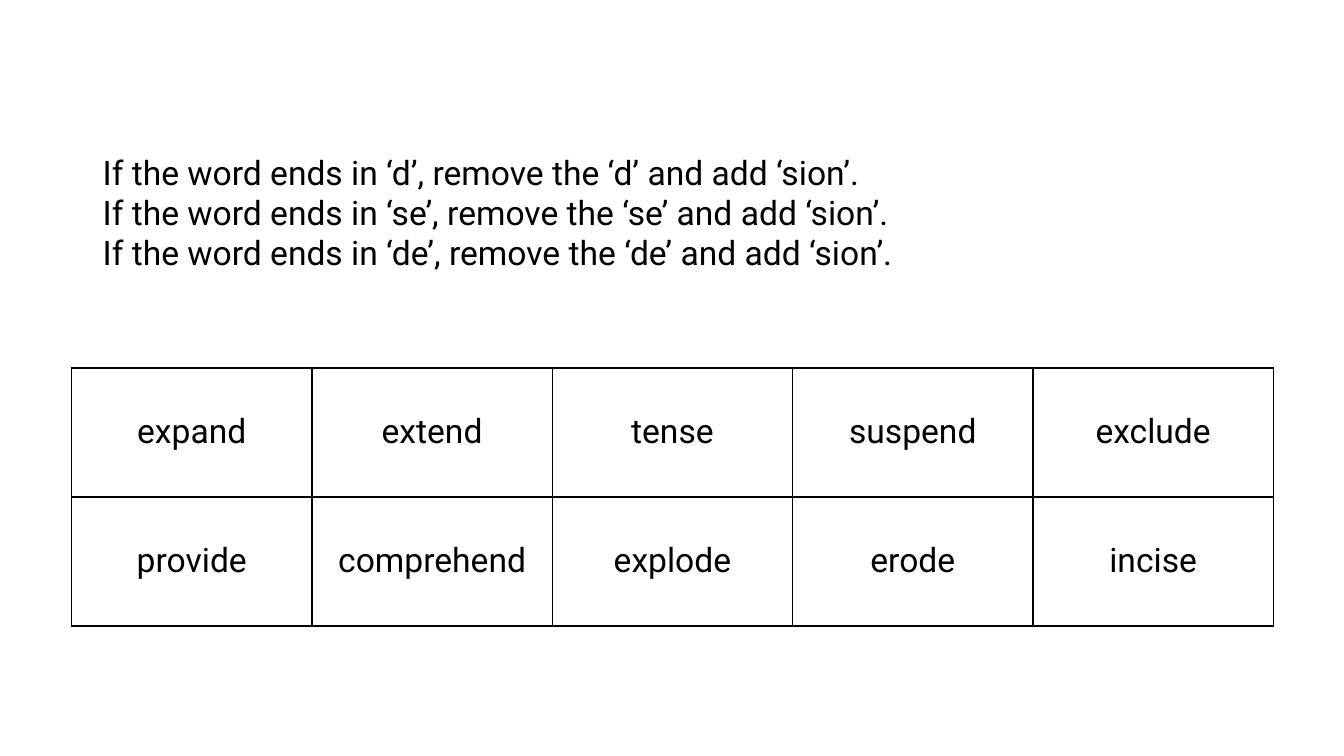
from pptx import Presentation
from pptx import util as u
from pptx.dml.color import RGBColor
from pptx.enum import text
from pptx.oxml import parse_xml
from pptx.oxml.ns import nsdecls

# Content
RULES = [("d", "sion"), ("se", "sion"), ("de", "sion")]
WORDS = [
    ["expand", "extend", "tense", "suspend", "exclude"],
    ["provide", "comprehend", "explode", "erode", "incise"],
]
FONT, SIZE = "Roboto", 24
INK, PAPER = "000000", "FFFFFF"
TABLE_LEFT, TABLE_TOP, TABLE_WIDTH, ROW_HEIGHT = 0.71, 3.65, 11.92, 1.28


def colour(code):
    return RGBColor.from_string(code)


def add_span(para, words):
    span = para.add_run()
    span.text = words
    span.font.name = FONT
    span.font.size = u.Pt(SIZE)
    span.font.color.rgb = colour(INK)


def add_borders(cell):
    properties = cell._tc.get_or_add_tcPr()
    for index, side in enumerate(("lnL", "lnR", "lnT", "lnB")):
        properties.insert(index, parse_xml(
            f'<a:{side} {nsdecls("a")} w="{u.Pt(1)}"><a:solidFill>'
            f'<a:srgbClr val="{INK}"/></a:solidFill></a:{side}>'))


deck = Presentation()
deck.slide_width, deck.slide_height = u.Inches(13.33), u.Inches(7.5)
page = deck.slides.add_slide(deck.slide_layouts[6])

# Spelling rules
box = page.shapes.add_textbox(u.Inches(0.92), u.Inches(1.38), u.Inches(11), u.Inches(1.45))
frame = box.text_frame
frame.word_wrap = True
frame.vertical_anchor = text.MSO_ANCHOR.MIDDLE
para = frame.paragraphs[0]
for number, (ending, suffix) in enumerate(RULES):
    if number:
        para.add_line_break()
    add_span(para, f"If the word ends in ‘{ending}’, remove the ‘{ending}’ and add ‘{suffix}’.")

# Word grid
rows, columns = len(WORDS), len(WORDS[0])
grid = page.shapes.add_table(
    rows, columns, u.Inches(TABLE_LEFT), u.Inches(TABLE_TOP),
    u.Inches(TABLE_WIDTH), u.Inches(ROW_HEIGHT * rows)).table
grid.first_row = grid.horz_banding = False
for row, words in enumerate(WORDS):
    for column, word in enumerate(words):
        cell = grid.cell(row, column)
        cell.fill.solid()
        cell.fill.fore_color.rgb = colour(PAPER)
        cell.vertical_anchor = text.MSO_ANCHOR.MIDDLE
        add_borders(cell)
        para = cell.text_frame.paragraphs[0]
        para.alignment = text.PP_ALIGN.CENTER
        add_span(para, word)

deck.save("out.pptx")
